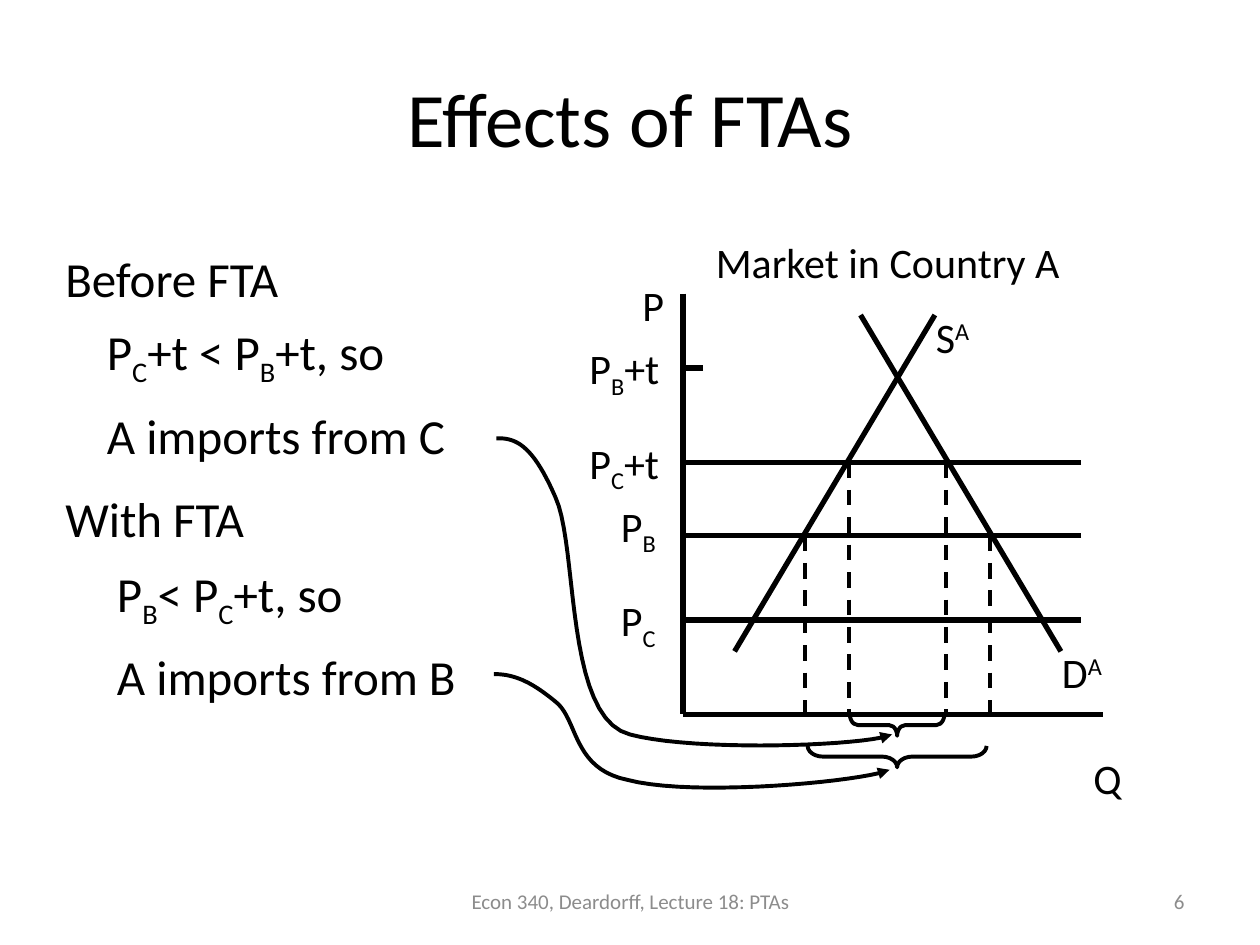
from dataclasses import dataclass

from lxml import etree
from pptx import Presentation
from pptx.dml.color import RGBColor
from pptx.enum.dml import MSO_LINE
from pptx.enum.shapes import MSO_CONNECTOR, MSO_SHAPE
from pptx.enum.text import MSO_ANCHOR as Anchor, PP_ALIGN as Align
from pptx.oxml.ns import qn
from pptx.slide import Slide
from pptx.util import Inches, Pt

Point = tuple[float, float]
FONT = "Calibri"
BLACK, GRAY = "000000", "8C8C8C"
BASELINES = {"_": "-25000", "^": "30000"}

# Diagram geometry, in inches
AXIS_X, AXIS_Y = 5.42, 5.67
AXIS_TOP, AXIS_RIGHT = 2.33, 8.75
PRICE_RIGHT, TICK_RIGHT = 8.58, 5.58
PB_T, PC_T, PB, PC = 2.92, 3.67, 4.25, 4.92
BRACE_CENTER, BRACE_DEPTH = 7.12, 0.17
CURVE_STEPS = 20


@dataclass
class Label:
    """Text in a box; a span starting with _ is lowered, one with ^ is raised."""
    spans: tuple[str, ...]
    left: float
    top: float
    width: float = 1
    height: float = 0.5
    size: int = 24
    color: str = BLACK
    align: Align = Align.LEFT
    anchor: Anchor = Anchor.TOP


@dataclass
class Brace:
    top: float
    width: float
    curl: float


def rgb(color: str) -> RGBColor:
    return RGBColor.from_string(color)


def statement(left: float, top: float, *spans: str) -> Label:
    return Label(spans, left, top, 3.25, 0.57, size=28)


def add_label(page: Slide, label: Label) -> None:
    box = page.shapes.add_textbox(Inches(label.left), Inches(label.top),
                                  Inches(label.width), Inches(label.height))
    frame = box.text_frame
    frame.word_wrap = True
    frame.vertical_anchor = label.anchor
    para = frame.paragraphs[0]
    para.alignment = label.align
    for text in label.spans:
        span = para.add_run()
        span.text = text.lstrip("_^")
        span.font.name = FONT
        span.font.size = Pt(label.size)
        span.font.color.rgb = rgb(label.color)
        if text[0] in BASELINES:
            span._r.get_or_add_rPr().set("baseline", BASELINES[text[0]])


def add_line(page: Slide, start: Point, end: Point, dashed: bool = False) -> None:
    line = page.shapes.add_connector(MSO_CONNECTOR.STRAIGHT,
                                     *map(Inches, (*start, *end)))
    line.line.color.rgb = rgb(BLACK)
    line.line.width = Pt(2.25 if dashed else 3)
    if dashed:
        line.line.dash_style = MSO_LINE.DASH
    etree.SubElement(line._element.spPr, qn("a:effectLst"))


def style_outline(shape) -> None:
    shape.shadow.inherit = False
    shape.fill.background()
    shape.line.color.rgb = rgb(BLACK)
    shape.line.width = Pt(2.25)


def add_brace(page: Slide, brace: Brace) -> None:
    """Draw a brace that opens upward, centred below the crossing curves."""
    middle = brace.top + BRACE_DEPTH / 2
    shape = page.shapes.add_shape(
        MSO_SHAPE.RIGHT_BRACE,
        Inches(BRACE_CENTER - BRACE_DEPTH / 2), Inches(middle - brace.width / 2),
        Inches(BRACE_DEPTH), Inches(brace.width))
    shape.rotation = 90
    shape.adjustments[0] = brace.curl
    shape.adjustments[1] = 0.5
    style_outline(shape)


def bezier_point(controls: list[Point], t: float) -> Point:
    weights = ((1 - t) ** 3, 3 * t * (1 - t) ** 2, 3 * t ** 2 * (1 - t), t ** 3)
    return tuple(sum(w * p[axis] for w, p in zip(weights, controls))
                 for axis in (0, 1))


def add_curved_arrow(page: Slide, knots: list[Point]) -> None:
    """Draw chained cubic curves, each sharing its end knot with the next."""
    points = [bezier_point(knots[i:i + 4], step / CURVE_STEPS)
              for i in range(0, len(knots) - 1, 3)
              for step in range(1, CURVE_STEPS + 1)]
    builder = page.shapes.build_freeform(*map(Inches, knots[0]))
    builder.add_line_segments([(Inches(x), Inches(y)) for x, y in points],
                              close=False)
    arrow = builder.convert_to_shape()
    style_outline(arrow)
    etree.SubElement(arrow.line._get_or_add_ln(), qn("a:tailEnd"), type="triangle")


LABELS = [
    Label(("Econ 340, Deardorff, Lecture 18: PTAs",), 3.42, 6.95, 3.17, 0.4,
          12, GRAY, Align.CENTER, Anchor.MIDDLE),
    Label(("6",), 7.17, 6.95, 2.33, 0.4, 12, GRAY, Align.RIGHT, Anchor.MIDDLE),
    Label(("Effects of FTAs",), 0.5, 0.3, 9, 1.25, 44,
          align=Align.CENTER, anchor=Anchor.MIDDLE),
    statement(0.42, 1.92, "Before FTA"),
    statement(0.75, 2.5, "P", "_C", "+t < P", "_B", "+t, so"),
    statement(0.75, 3.17, "A imports from C"),
    statement(0.42, 3.83, "With FTA"),
    statement(0.83, 4.42, "P", "_B", "< P", "_C", "+t, so"),
    statement(0.83, 5.08, "A imports from B"),
    Label(("Market in Country A",), 5.42, 1.83, 3.25, align=Align.CENTER),
    Label(("P",), 5, 2.17),
    Label(("Q",), 8.58, 5.92),
    Label(("S", "^A"), 7.33, 2.42),
    Label(("D", "^A"), 8.33, 5.08),
    Label(("P", "_B", "+t"), 4.58, 2.67),
    Label(("P", "_C", "+t"), 4.58, 3.42),
    Label(("P", "_B"), 4.83, 3.92),
    Label(("P", "_C"), 4.83, 4.67),
]
SUPPLY = ((7.42, 2.5), (5.83, 5.17))
DEMAND = ((6.83, 2.5), (8.42, 5.17))
QUANTITIES = [(6.39, PB), (6.74, PC_T), (7.51, PC_T), (7.86, PB)]
BRACES = [Brace(5.67, 0.75, 0.375), Brace(5.92, 1.42, 0.708)]
IMPORT_ARROWS = [
    [(3.94, 3.48), (4.11, 3.47), (4.24, 3.56), (4.41, 3.95), (4.59, 4.35),
     (4.48, 5.7), (5, 5.83), (5.52, 5.97), (6.89, 5.92), (7.08, 5.83)],
    [(3.92, 5.35), (4.1, 5.35), (4.24, 5.43), (4.41, 5.57), (4.59, 5.71),
     (4.54, 6.1), (4.98, 6.19), (5.51, 6.33), (6.87, 6.2), (7.06, 6.11)],
]


def main() -> None:
    deck = Presentation()
    deck.slide_width, deck.slide_height = Inches(10), Inches(7.5)
    page = deck.slides.add_slide(deck.slide_layouts[6])

    add_line(page, (AXIS_X, AXIS_TOP), (AXIS_X, AXIS_Y))
    add_line(page, (AXIS_RIGHT, AXIS_Y), (AXIS_X, AXIS_Y))
    for curve in (SUPPLY, DEMAND):
        add_line(page, *curve)
    for price in (PC, PB, PC_T):
        add_line(page, (PRICE_RIGHT, price), (AXIS_X, price))
    for price in (PB_T, PC_T, PB):
        add_line(page, (TICK_RIGHT, price), (AXIS_X, price))
    for quantity, price in QUANTITIES:
        add_line(page, (quantity, price), (quantity, AXIS_Y), dashed=True)
    for label in LABELS:
        add_label(page, label)
    for brace in BRACES:
        add_brace(page, brace)
    for knots in IMPORT_ARROWS:
        add_curved_arrow(page, knots)

    deck.save("out.pptx")


if __name__ == "__main__":
    main()
